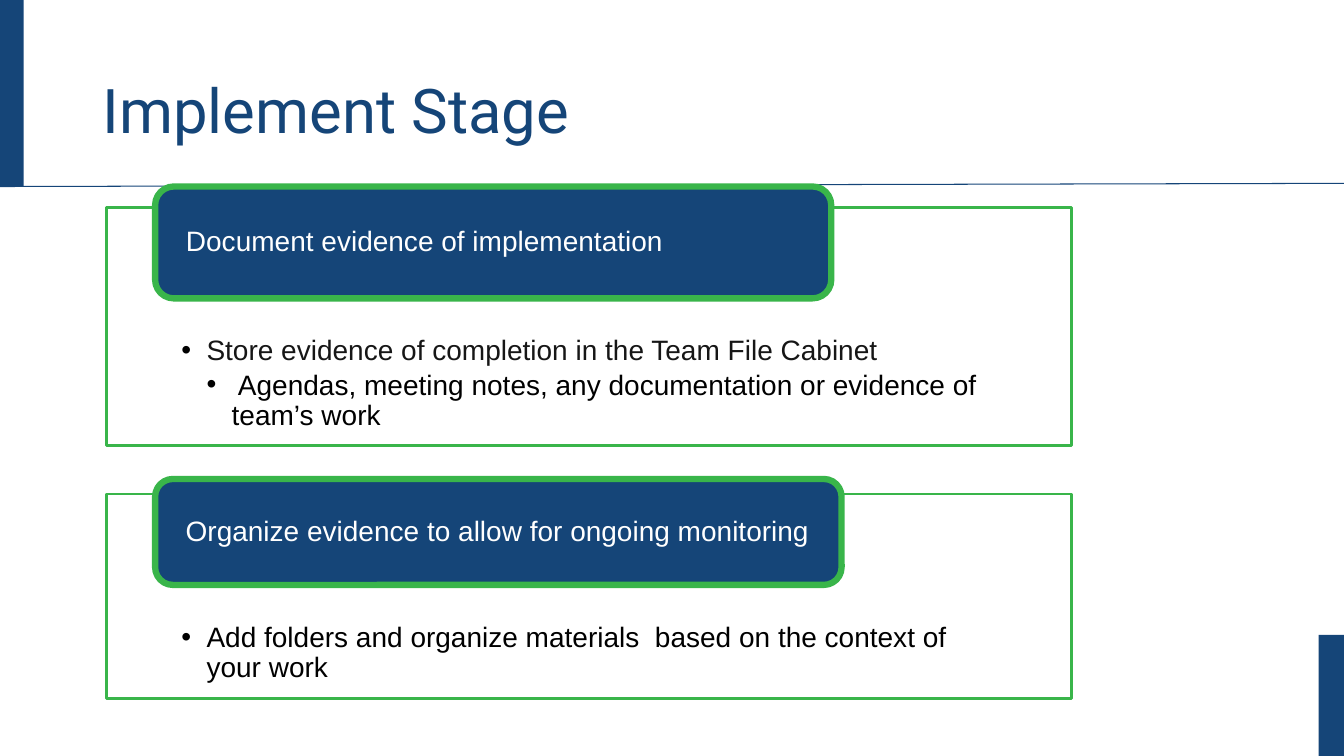
from dataclasses import dataclass

from lxml.etree import SubElement
from pptx import Presentation
from pptx.dml.color import RGBColor as RGB
from pptx.enum.shapes import MSO_CONNECTOR as CONNECTOR, MSO_SHAPE as SHAPE
from pptx.enum.text import MSO_ANCHOR as ANCHOR, PP_ALIGN as ALIGN
from pptx.oxml.ns import qn
from pptx.util import Cm, Pt


@dataclass(frozen=True)
class Theme:
    navy: RGB = RGB.from_string("154578")
    green: RGB = RGB.from_string("39B54A")
    white: RGB = RGB.from_string("FFFFFF")
    ink: RGB = RGB.from_string("161616")
    black: RGB = RGB.from_string("000000")
    title_font: str = "Roboto"
    body_font: str = "Arial"
    title_size: Pt = Pt(44)
    body_size: Pt = Pt(20)


THEME = Theme()
SLIDE_W, SLIDE_H = 33.87, 19.05
CARD_LEFT, CARD_W = 2.69, 24.31
HEADING_LEFT = 3.91
BODY_SIDE, BODY_TOP = 1.88, 3.25
INDENT = 0.635


def add_box(s, kind, box, fill, line=None, weight=0):
    sp = s.shapes.add_shape(kind, *(Cm(v) for v in box))
    sp.shadow.inherit = False
    sp.fill.solid()
    sp.fill.fore_color.rgb = fill
    if line is None:
        sp.line.fill.background()
    else:
        sp.line.color.rgb = line
        sp.line.width = Pt(weight)
    return sp


def set_frame(sp, anchor, side, edge):
    tf = sp.text_frame
    tf.word_wrap = True
    tf.vertical_anchor = anchor
    tf.margin_left = tf.margin_right = Cm(side)
    tf.margin_top = tf.margin_bottom = Cm(edge)
    return tf


def style_paragraph(p, font, size, color):
    p.alignment = ALIGN.LEFT
    p.line_spacing = 0.9
    for r in p.runs:
        r.font.name, r.font.size = font, size
        r.font.color.rgb = color


def add_bullet(p, level):
    p.level = level
    pPr = p._p.get_or_add_pPr()
    pPr.set("marL", str(Cm(INDENT * (level + 1))))
    pPr.set("indent", str(-Cm(INDENT)))
    color = SubElement(pPr, qn("a:buClr"))
    SubElement(color, qn("a:srgbClr"), val=str(THEME.black))
    SubElement(pPr, qn("a:buFont"), typeface=THEME.body_font)
    SubElement(pPr, qn("a:buChar"), char="•")


def add_rule(s, x1, y1, x2, y2):
    line = s.shapes.add_connector(CONNECTOR.STRAIGHT, Cm(x1), Cm(y1), Cm(x2), Cm(y2))
    line.line.color.rgb = THEME.navy
    line.line.width = Pt(0.75)
    SubElement(line._element.spPr, qn("a:effectLst"))


def add_title(s, text):
    sp = s.shapes.add_textbox(Cm(2.34), Cm(1.02), Cm(29.21), Cm(3.68))
    tf = set_frame(sp, ANCHOR.MIDDLE, 0.25, 0.13)
    tf.text = text
    style_paragraph(tf.paragraphs[0], THEME.title_font, THEME.title_size, THEME.navy)


def add_bullets(s, box, bullets):
    sp = s.shapes.add_textbox(*(Cm(v) for v in box))
    tf = set_frame(sp, ANCHOR.TOP, 0, 0)
    tf.text = "\n".join(text for text, _, _ in bullets)
    for p, (_, level, color) in zip(tf.paragraphs, bullets):
        add_bullet(p, level)
        style_paragraph(p, THEME.body_font, THEME.body_size, color)
        p.space_after = Pt(3)


def add_card(s, top, height, heading, heading_box, bullets):
    # Outlined panel with its bullets
    add_box(s, SHAPE.RECTANGLE, (CARD_LEFT, top, CARD_W, height),
            THEME.white, THEME.green, 2)
    add_bullets(s, (CARD_LEFT + BODY_SIDE, top + BODY_TOP,
                    CARD_W - 2 * BODY_SIDE, height - BODY_TOP), bullets)

    # Rounded heading across the panel's top edge
    heading_top, heading_w, heading_h = heading_box
    label = add_box(s, SHAPE.ROUNDED_RECTANGLE,
                    (HEADING_LEFT, heading_top, heading_w, heading_h),
                    THEME.navy, THEME.green, 4.5)
    tf = set_frame(label, ANCHOR.MIDDLE, 0.64, 0)
    tf.text = heading
    style_paragraph(tf.paragraphs[0], THEME.body_font, THEME.body_size, THEME.white)


def main():
    prs = Presentation()
    prs.slide_width, prs.slide_height = Cm(SLIDE_W), Cm(SLIDE_H)
    s = prs.slides.add_slide(prs.slide_layouts[6])

    # Frame: corner bars and the line under the title
    add_box(s, SHAPE.RECTANGLE, (0, 0, 0.6, 4.7), THEME.navy)
    add_rule(s, 0, 4.7, SLIDE_W, 4.62)
    add_box(s, SHAPE.RECTANGLE, (SLIDE_W - 0.64, 16, 0.64, 3.05), THEME.navy)

    add_title(s, "Implement Stage")

    # Cards
    add_card(s, 5.23, 5.99, "Document evidence of implementation", (4.7, 17.04, 2.82), [
        ("Store evidence of completion in the Team File Cabinet", 0, THEME.ink),
        (" Agendas, meeting notes, any documentation or evidence of team’s work",
         1, THEME.black),
    ])
    add_card(s, 12.45, 5.16, "Organize evidence to allow for ongoing monitoring",
             (12.07, 17.3, 2.67), [
        ("Add folders and organize materials  based on the context of your work",
         0, THEME.black),
    ])

    prs.save("out.pptx")


if __name__ == "__main__":
    main()
